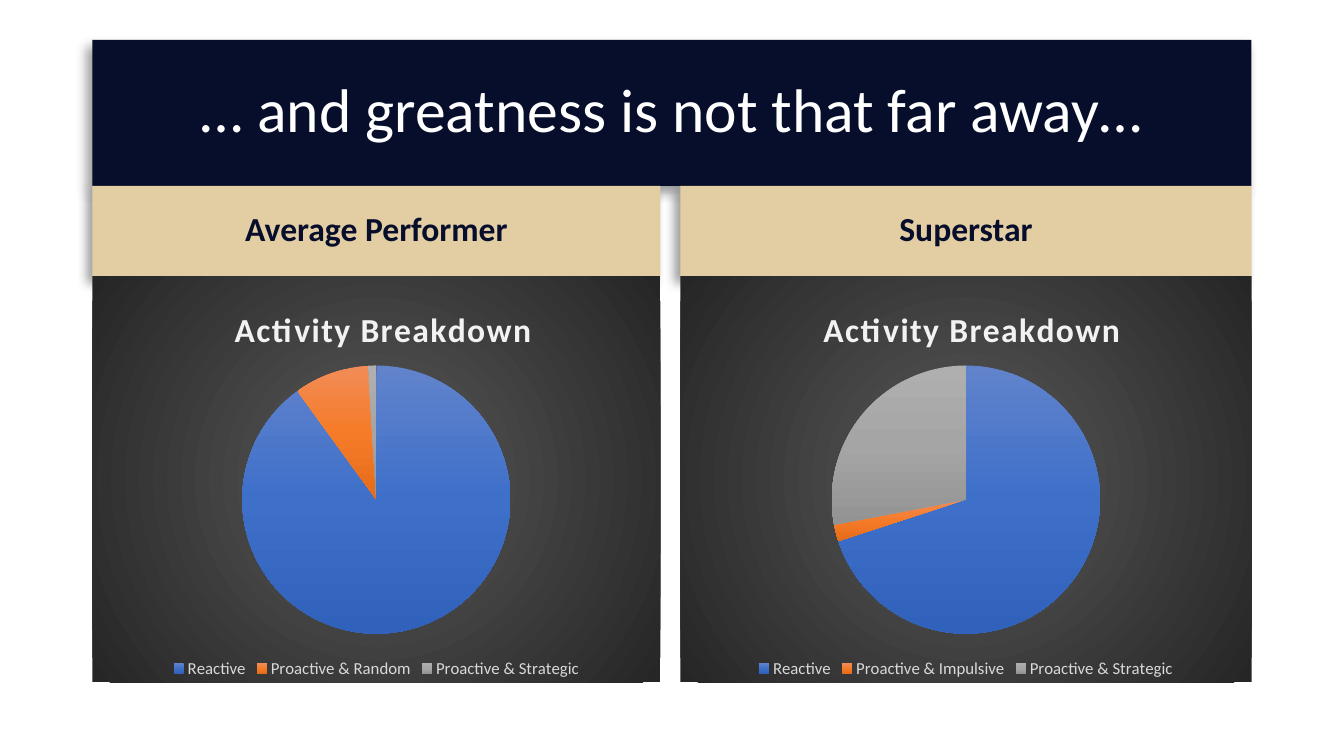
from lxml.etree import SubElement
from pptx import Presentation
from pptx.chart.data import CategoryChartData
from pptx.dml.color import RGBColor
from pptx.enum.chart import XL_CHART_TYPE, XL_LEGEND_POSITION
from pptx.enum.shapes import MSO_SHAPE
from pptx.enum.text import MSO_ANCHOR, PP_ALIGN
from pptx.oxml import parse_xml
from pptx.oxml.ns import nsdecls, qn
from pptx.util import Pt

PX = 9525
THEME = {
    "font": "Calibri",
    "navy": "070E2B", "sand": "E3CEA3", "white": "FFFFFF",
    "title": "F2F2F2", "legend": "D9D9D9", "black": "000000",
    "panel": ["595959", "262626"],
    "slices": [
        ["6183CB", "3E70CA", "3062BB"],
        ["F18C57", "F67B28", "E56C19"],
        ["AFAFAF", "A5A5A5", "939393"],
    ],
    "head": 44, "sub": 24, "key": 12, "base": 10,
}


def add_band(box, fill, text, size, color, bold, gap):
    band = slide.shapes.add_shape(MSO_SHAPE.RECTANGLE, *[n * PX for n in box])
    band.fill.solid()
    band.fill.fore_color.rgb = RGBColor.from_string(THEME[fill])
    band.line.fill.background()
    band.shadow.inherit = False
    glow = SubElement(
        band._element.spPr.find(qn("a:effectLst")), qn("a:outerShdw"),
        blurRad=str(Pt(8)), dist=str(Pt(6)), dir="8100000", algn="tr", rotWithShape="0")
    tint = SubElement(glow, qn("a:srgbClr"), val=THEME["black"])
    SubElement(tint, qn("a:alpha"), val="40000")
    frame = band.text_frame
    frame.word_wrap = True
    frame.vertical_anchor = MSO_ANCHOR.MIDDLE
    para = frame.paragraphs[0]
    para.alignment = PP_ALIGN.CENTER
    para.line_spacing = 0.9
    para.space_before = Pt(gap)
    run = para.add_run()
    run.text = text
    run.font.name = THEME["font"]
    run.font.size = Pt(THEME[size])
    run.font.bold = bold
    run.font.color.rgb = RGBColor.from_string(THEME[color])


def make_grad(colors, tail):
    last = len(colors) - 1
    stops = "".join(
        f'<a:gs pos="{100000 * i // last}"><a:srgbClr val="{c}"/></a:gs>'
        for i, c in enumerate(colors))
    return parse_xml(
        f'<a:gradFill {nsdecls("a")} rotWithShape="1"><a:gsLst>{stops}</a:gsLst>{tail}</a:gradFill>')


deck = Presentation()
deck.slide_width = 1280 * PX
deck.slide_height = 720 * PX
slide = deck.slides.add_slide(deck.slide_layouts[6])

add_band((88, 38, 1104, 139), "navy", "… and greatness is not that far away…",
         "head", "white", False, 0)

panels = [
    (88, 541, "Average Performer", "Random", (90, 9, 1)),
    (648, 544, "Superstar", "Impulsive", (70, 2, 28)),
]
for left, width, label, trait, values in panels:
    add_band((left, 177, width, 86), "sand", label, "sub", "navy", True, 10)

    data = CategoryChartData()
    data.categories = ["Reactive", f"Proactive & {trait}", "Proactive & Strategic"]
    data.add_series("Series 1", values)
    chart = slide.shapes.add_chart(
        XL_CHART_TYPE.PIE, left * PX, 263 * PX, width * PX, 387 * PX, data).chart
    chart.font.name = THEME["font"]
    chart.font.size = Pt(THEME["base"])
    chart.font.color.rgb = RGBColor.from_string(THEME["black"])

    chart.has_title = True
    run = chart.chart_title.text_frame.paragraphs[0].add_run()
    run.text = "Activity Breakdown"
    run.font.name = THEME["font"]
    run.font.size = Pt(THEME["sub"])
    run.font.bold = True
    run.font.color.rgb = RGBColor.from_string(THEME["title"])
    run.font._element.set("spc", "100")

    chart.has_legend = True
    legend = chart.legend
    legend.position = XL_LEGEND_POSITION.BOTTOM
    legend.include_in_layout = False
    legend.font.name = THEME["font"]
    legend.font.size = Pt(THEME["key"])
    legend.font.color.rgb = RGBColor.from_string(THEME["legend"])

    pie = chart.plots[0]
    pie.vary_by_categories = True
    for i, colors in enumerate(THEME["slices"]):
        style = pie.series[0].points[i].format
        style.line.fill.background()
        style._element.get_or_add_spPr().insert(
            0, make_grad(colors, '<a:lin ang="5400000" scaled="0"/>'))

    space = chart._chartSpace
    back = parse_xml(f'<c:spPr {nsdecls("c", "a")}><a:ln><a:noFill/></a:ln></c:spPr>')
    back.insert(0, make_grad(
        THEME["panel"],
        '<a:path path="circle"><a:fillToRect l="50000" t="50000" r="50000" b="50000"/></a:path>'))
    space.find(qn("c:txPr")).addprevious(back)

    spots = [
        ("c:title", 1, {"xMode": "edge", "yMode": "edge", "x": 0.24, "y": 0.06}),
        ("c:plotArea", 0, {"layoutTarget": "inner", "xMode": "edge", "yMode": "edge",
                           "x": 0.26, "y": 0.22, "w": 0.48, "h": 0.66}),
    ]
    for tag, index, rules in spots:
        host = space.chart.find(qn(tag))
        for old in host.findall(qn("c:layout")):
            host.remove(old)
        place = parse_xml(f'<c:layout {nsdecls("c")}><c:manualLayout/></c:layout>')
        for name, value in rules.items():
            SubElement(place[0], qn(f"c:{name}"), val=str(value))
        host.insert(index, place)

deck.save("out.pptx")
